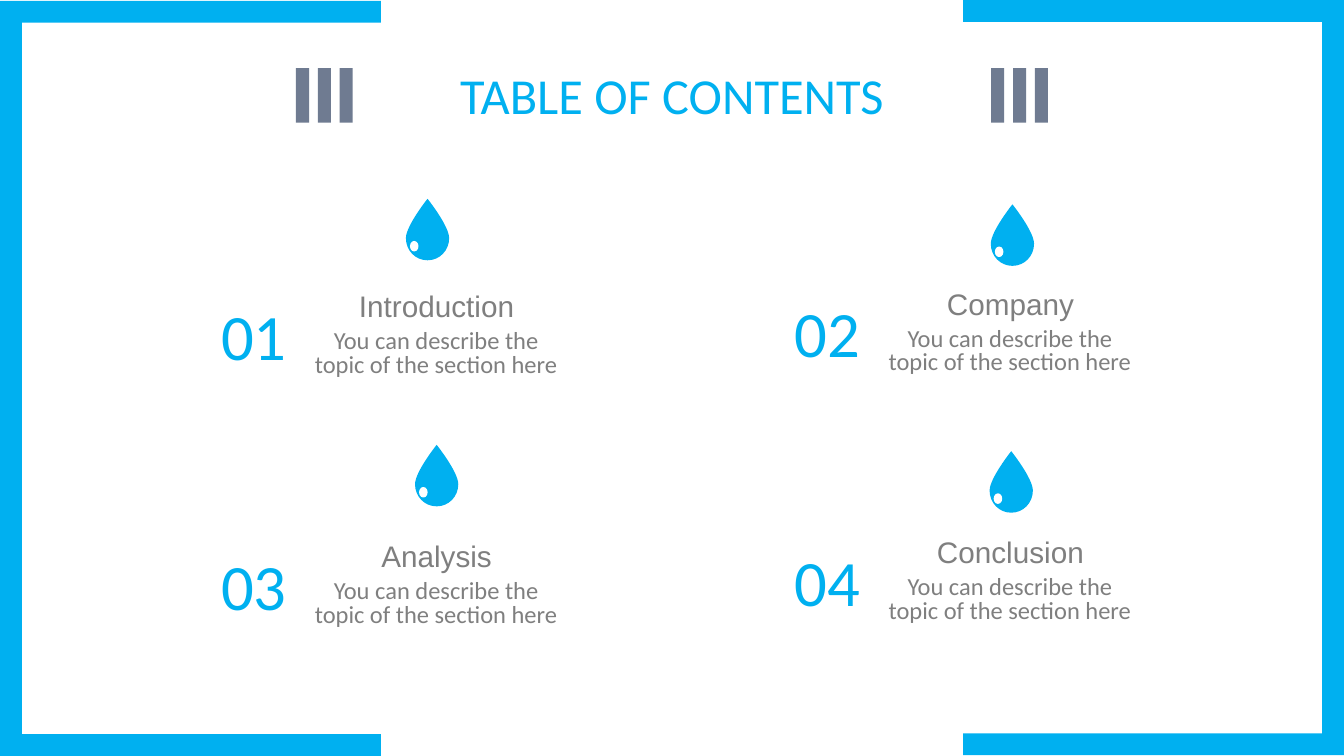
from dataclasses import dataclass

from lxml import etree
from pptx import Presentation
from pptx import util as u
from pptx.dml.color import RGBColor
from pptx.enum import shapes, text
from pptx.oxml.ns import qn
from pptx.util import Cm


@dataclass(frozen=True)
class Style:
    size: float
    font: str
    color: RGBColor
    line_spacing: float = 1.0
    space_before: float = 0


@dataclass(frozen=True)
class Theme:
    blue = RGBColor(0x00, 0xB0, 0xF0)
    slate = RGBColor(0x6F, 0x7B, 0x91)
    gray = RGBColor(0x7F, 0x7F, 0x7F)
    white = RGBColor(0xFF, 0xFF, 0xFF)
    heading = Style(36, "Calibri", blue)
    number = Style(46.2, "Calibri", blue, 0.8)
    topic = Style(21.2, "Arial", gray, 0.8, 10)
    description = Style(17.5, "Calibri", gray, 0.8, 10)


@dataclass(frozen=True)
class Section:
    number: str
    topic: str
    left: float
    top: float
    drop_left: float
    drop_top: float


THEME = Theme()
WIDTH, HEIGHT = 33.87, 19.05
DESCRIPTION = "You can describe the topic of the section here"
SECTIONS = [
    Section("01", "Introduction", 4.95, 7.68, 10.23, 5.01),
    Section("03", "Analysis", 4.95, 13.99, 10.46, 11.21),
    Section("02", "Company", 19.41, 7.62, 24.97, 5.15),
    Section("04", "Conclusion", 19.41, 13.88, 24.94, 11.37),
]
DROP_WIDTH, DROP_HEIGHT = 1.09, 1.55
# Percent of the drop's box: a start point, then curves of three control points
DROP_START = (100, 64)
DROP_CURVES = [
    [(100, 84), (78, 100), (50, 100)],
    [(22, 100), (0, 84), (0, 64)],
    [(0, 44), (50, 0), (50, 0)],
    [(50, 0), (100, 44), (100, 64)],
]


def paint(shape, color: RGBColor) -> None:
    shape.shadow.inherit = False
    shape.fill.solid()
    shape.fill.fore_color.rgb = color
    shape.line.fill.background()


def add_outline(parent, points: list[tuple[float, float]], color: RGBColor):
    start, *rest = [(Cm(x), Cm(y)) for x, y in points]
    builder = parent.build_freeform(*start)
    builder.add_line_segments(rest, close=True)
    outline = builder.convert_to_shape()
    paint(outline, color)
    return outline


def add_bracket(parent, edge: float, direction: int, top: float, bottom: float) -> None:
    """Draw a frame half that opens away from the given slide edge."""
    reach, band = edge + direction * 9.6, 0.55
    inner = edge + direction * band
    add_outline(parent, [
        (inner, top + band), (inner, bottom - band), (reach, bottom - band),
        (reach, bottom), (edge, bottom), (edge, top), (reach, top), (reach, top + band),
    ], THEME.blue)


def add_bars(parent, left: float) -> None:
    bars = parent.add_group_shape().shapes
    for index in range(3):
        bar = bars.add_shape(
            shapes.MSO_SHAPE.RECTANGLE,
            Cm(left + index * 0.55), Cm(1.72), Cm(0.33), Cm(1.37))
        paint(bar, THEME.slate)


def write(shape, words: str, style: Style, anchor=text.MSO_ANCHOR.TOP) -> None:
    frame = shape.text_frame
    frame.word_wrap = True
    frame.auto_size = text.MSO_AUTO_SIZE.NONE
    frame.vertical_anchor = anchor
    paragraph = frame.paragraphs[0]
    paragraph.text = words
    paragraph.alignment = text.PP_ALIGN.CENTER
    paragraph.line_spacing = style.line_spacing
    paragraph.space_before = u.Pt(style.space_before)
    paragraph.font.size = u.Pt(style.size)
    paragraph.font.name = style.font
    paragraph.font.color.rgb = style.color


def curve_drop(outline) -> None:
    """Replace the straight edges of a box outline by the curves of a drop."""
    contour = outline.element.find(".//" + qn("a:path"))
    contour.clear()
    contour.set("w", "100")
    contour.set("h", "100")
    segments = [("a:moveTo", [DROP_START])]
    segments += [("a:cubicBezTo", curve) for curve in DROP_CURVES]
    for tag, points in segments:
        segment = etree.SubElement(contour, qn(tag))
        for x, y in points:
            etree.SubElement(segment, qn("a:pt"), x=str(x), y=str(y))
    etree.SubElement(contour, qn("a:close"))


def add_drop(parent, left: float, top: float) -> None:
    parts = parent.add_group_shape().shapes
    right, bottom = left + DROP_WIDTH, top + DROP_HEIGHT
    curve_drop(add_outline(
        parts, [(left, top), (right, top), (right, bottom), (left, bottom)], THEME.blue))
    glint = parts.add_shape(
        shapes.MSO_SHAPE.FLOWCHART_CONNECTOR,
        Cm(left + 0.12), Cm(top + 1.08), Cm(0.18), Cm(0.23))
    paint(glint, THEME.white)
    glint.line.color.rgb = THEME.white
    glint.line.width = u.Pt(1)


def add_section(parent, section: Section) -> None:
    left, top = section.left, section.top
    middle = text.MSO_ANCHOR.MIDDLE
    entry = parent.add_group_shape().shapes
    write(entry.add_textbox(Cm(left + 2.84), Cm(top - 0.39), Cm(6.43), Cm(0.99)),
          section.topic, THEME.topic, middle)
    write(entry.add_textbox(Cm(left + 2.59), Cm(top + 0.53), Cm(6.91), Cm(1.73)),
          DESCRIPTION, THEME.description)
    write(parent.add_textbox(Cm(left), Cm(top), Cm(2.9), Cm(1.85)),
          section.number, THEME.number, middle)


def main() -> None:
    deck = Presentation()
    deck.slide_width, deck.slide_height = Cm(WIDTH), Cm(HEIGHT)
    slide = deck.slides.add_slide(deck.slide_layouts.get_by_name("Title Only"))
    parent = slide.shapes

    add_bracket(parent, 0, 1, 0.02, HEIGHT)
    add_bracket(parent, WIDTH, -1, 0, HEIGHT - 0.02)

    heading = parent.title
    heading.left, heading.top = Cm(8.92), Cm(1.5)
    heading.width, heading.height = Cm(16.03), Cm(1.8)
    write(heading, "TABLE OF CONTENTS", THEME.heading)

    for bars_left in (7.46, 24.98):
        add_bars(parent, bars_left)
    for section in SECTIONS:
        add_section(parent, section)
    for section in SECTIONS:
        add_drop(parent, section.drop_left, section.drop_top)

    deck.save("out.pptx")


if __name__ == "__main__":
    main()
